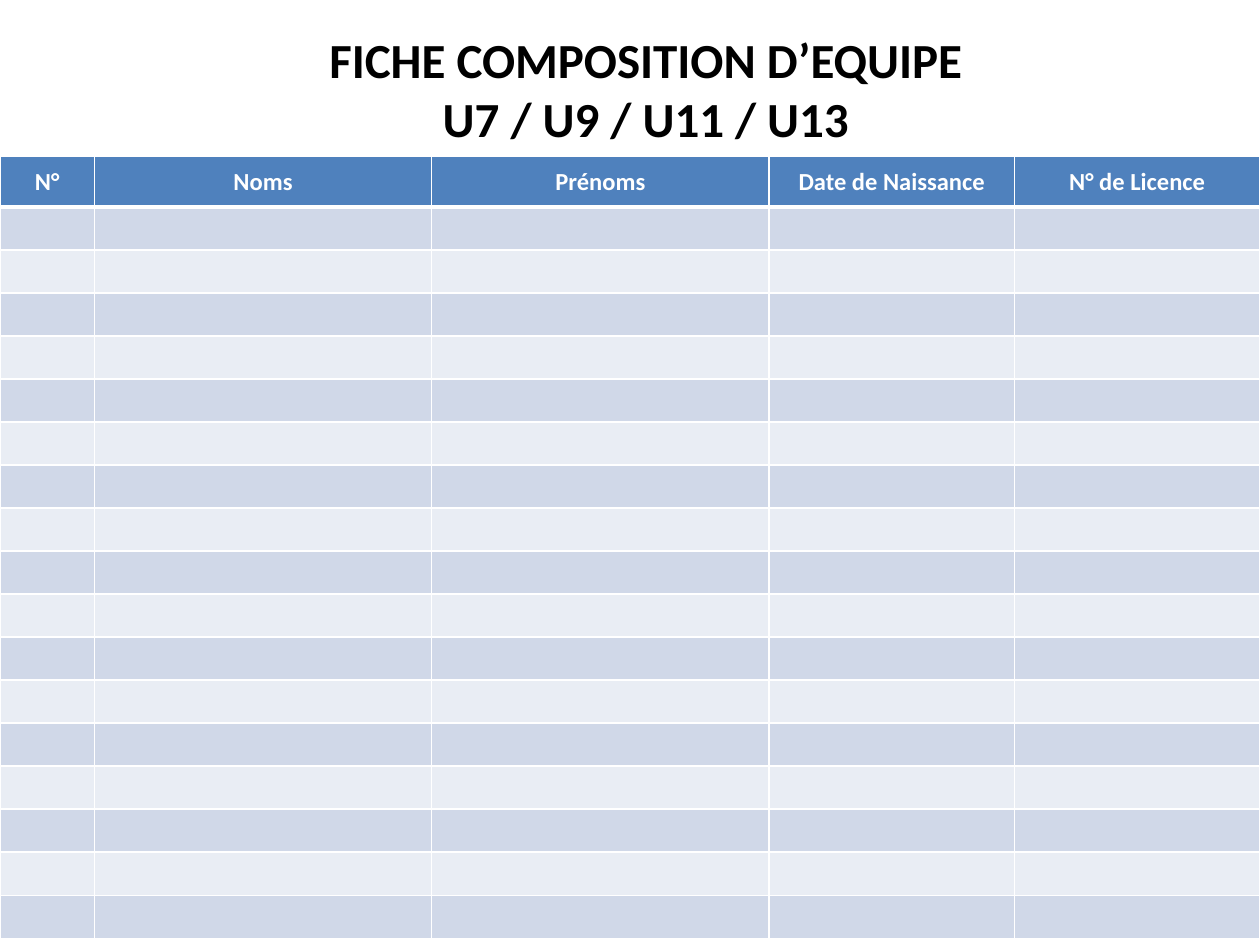
import pptx
import pptx.dml.color
import pptx.enum.text
import pptx.oxml.ns
import pptx.util
import lxml.etree


def color(hex_string):
    return pptx.dml.color.RGBColor.from_string(hex_string)


class TeamSheet:
    """Holds the style and the current slide; lengths are shares of its size."""
    font = "Calibri"
    ink, white, header = "000000", "FFFFFF", "4F81BD"
    bands = ("D0D8E8", "E9EDF4")
    thin, thick = 1, 3

    def __init__(self, deck):
        self.width, self.height = deck.slide_width, deck.slide_height
        self.page = deck.slides.add_slide(deck.slide_layouts[6])

    def frame(self, left, top, width, height):
        return (round(left * self.width), round(top * self.height),
                round(width * self.width), round(height * self.height))

    def bold_text(self, text_frame, text, size, fill):
        text_frame.text = text
        for para in text_frame.paragraphs:
            para.alignment = pptx.enum.text.PP_ALIGN.CENTER
            for span in para.runs:
                span.font.name = self.font
                span.font.size = pptx.util.Pt(size)
                span.font.bold = True
                span.font.color.rgb = color(fill)

    def title(self, text, *place):
        box = self.page.shapes.add_textbox(*self.frame(*place))
        box.text_frame.word_wrap = True
        self.bold_text(box.text_frame, text, 28, self.ink)

    def borders(self, cell, top, bottom):
        properties = cell._tc.get_or_add_tcPr()
        widths = {"lnL": self.thin, "lnR": self.thin, "lnT": top, "lnB": bottom}
        for position, (side, points) in enumerate(widths.items()):
            line = lxml.etree.Element(pptx.oxml.ns.qn("a:" + side),
                                      w=str(pptx.util.Pt(points)))
            solid = lxml.etree.SubElement(line, pptx.oxml.ns.qn("a:solidFill"))
            lxml.etree.SubElement(solid, pptx.oxml.ns.qn("a:srgbClr"), val=self.white)
            properties.insert(position, line)

    def empty_text(self, cell, size):
        # The end mark sets the height of an empty line
        para = cell.text_frame.paragraphs[0]
        lxml.etree.SubElement(para._p, pptx.oxml.ns.qn("a:endParaRPr"),
                              sz=str(size * 100))

    def roster(self, headings, column_shares, players, header_share, *place):
        left, top, width, height = self.frame(*place)
        table = self.page.shapes.add_table(
            players + 1, len(headings), left, top, width, height).table
        table.horz_banding = False
        for column, share in zip(table.columns, column_shares):
            column.width = round(width * share / sum(column_shares))
        header_height = round(height * header_share)
        for number, row in enumerate(table.rows):
            is_header = number == 0
            row.height = header_height if is_header else (height - header_height) // players
            fill = self.header if is_header else self.bands[(number - 1) % 2]
            for heading, cell in zip(headings, row.cells):
                cell.fill.solid()
                cell.fill.fore_color.rgb = color(fill)
                self.borders(cell, self.thick if number == 1 else self.thin,
                             self.thick if is_header else self.thin)
                if is_header:
                    cell.vertical_anchor = pptx.enum.text.MSO_ANCHOR.MIDDLE
                    self.bold_text(cell.text_frame, heading, 14, self.white)
                else:
                    self.empty_text(cell, 12)


def main():
    deck = pptx.Presentation()
    deck.slide_width = pptx.util.Inches(10)
    deck.slide_height = pptx.util.Inches(7.5)
    sheet = TeamSheet(deck)

    # Title above the table
    sheet.title("FICHE COMPOSITION D’EQUIPE\nU7 / U9 / U11 / U13",
                0.17, 0.025, 0.685, 0.14)

    # One header row and a blank row for each player
    sheet.roster(["N°", "Noms", "Prénoms", "Date de Naissance", "N° de Licence"],
                 [0.75, 2.68, 2.68, 1.95, 1.95], 17, 0.065,
                 0, 1.24 / 7.5, 1, 6.21 / 7.5)
    deck.save("out.pptx")


if __name__ == "__main__":
    main()
